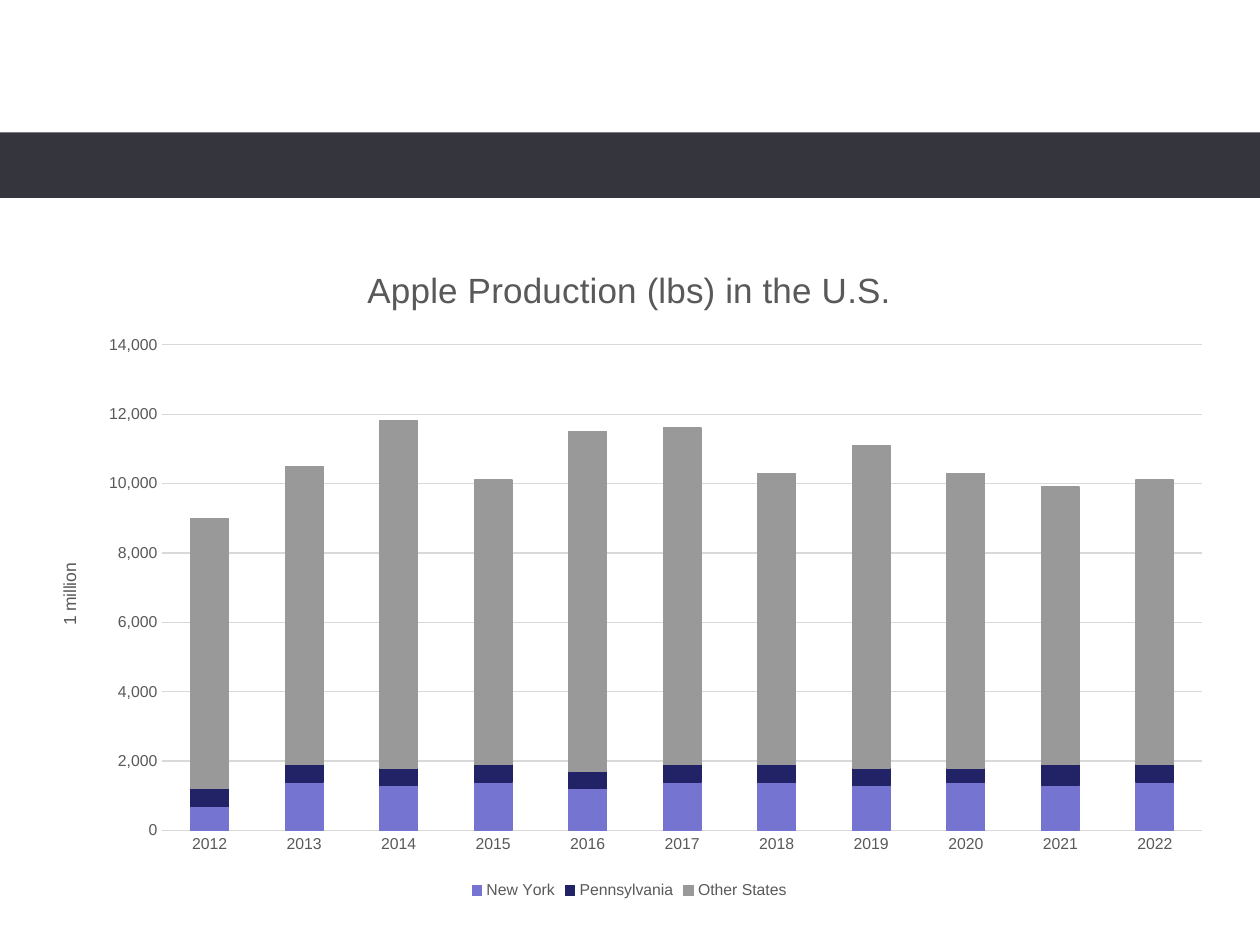
from pptx import Presentation
from pptx.chart.data import CategoryChartData as Data
from pptx.dml.color import RGBColor as Rgb
from pptx.enum.chart import XL_CHART_TYPE as Kind, XL_LEGEND_POSITION as Spot, XL_TICK_MARK as Tick
from pptx.enum.shapes import MSO_SHAPE as Shape
from pptx.util import Inches, Pt

HUES = {
    "band": "35353D", "text": "595959", "grid": "D9D9D9",
    "New York": "7575D1", "Pennsylvania": "222267", "Other States": "999999",
}
CROPS = {
    "New York": (700, 1400, 1300, 1400, 1200, 1400, 1400, 1300, 1400, 1300, 1400),
    "Pennsylvania": (500, 500, 500, 500, 500, 500, 500, 500, 400, 600, 500),
    "Other States": (7800, 8600, 10000, 8200, 9800, 9700, 8400, 9300, 8500, 8000, 8200),
}


def hue(key):
    return Rgb.from_string(HUES[key])


def style(font, size):
    font.name = "Arial"
    font.size = Pt(size)
    font.bold = False
    font.color.rgb = hue("text")


def rule(line, key):
    line.color.rgb = hue(key)
    line.width = Pt(0.75)


def label(frame, text, size):
    run = frame.paragraphs[0].add_run()
    run.text = text
    style(run.font, size)


def add_band(slide, box):
    band = slide.shapes.add_shape(Shape.RECTANGLE, *map(Inches, box))
    band.shadow.inherit = False
    band.fill.solid()
    band.fill.fore_color.rgb = hue("band")
    band.line.fill.background()


def add_crops(slide, box):
    data = Data(number_format="#,##0")
    data.categories = [str(year) for year in range(2012, 2023)]
    for name, vals in CROPS.items():
        data.add_series(name, vals)
    chart = slide.shapes.add_chart(Kind.COLUMN_STACKED, *map(Inches, box), data).chart
    style(chart.font, 10)

    chart.has_title = True
    label(chart.chart_title.text_frame, "Apple Production (lbs) in the U.S.", 20)
    chart.chart_title.include_in_layout = False
    chart.has_legend = True
    chart.legend.position = Spot.BOTTOM
    chart.legend.include_in_layout = False
    style(chart.legend.font, 9)

    years, sums = chart.category_axis, chart.value_axis
    for axis in (years, sums):
        axis.major_tick_mark = axis.minor_tick_mark = Tick.NONE
        style(axis.tick_labels.font, 9)
    rule(years.format.line, "grid")
    sums.format.line.fill.background()
    sums.has_major_gridlines = True
    rule(sums.major_gridlines.format.line, "grid")
    sums.minimum_scale, sums.maximum_scale, sums.major_unit = 0, 14000, 2000
    sums.tick_labels.number_format = "#,##0"
    sums.tick_labels.number_format_is_linked = False
    label(sums.axis_title.text_frame, "1 million", 10)

    plot = chart.plots[0]
    plot.gap_width, plot.overlap = 150, 100
    plot.vary_by_categories = False
    for part in plot.series:
        part.format.fill.solid()
        part.format.fill.fore_color.rgb = hue(part.name)
        rule(part.format.line, part.name)


def main():
    deck = Presentation()
    deck.slide_width, deck.slide_height = Inches(10), Inches(7.5)
    slide = deck.slides.add_slide(deck.slide_layouts[6])
    add_band(slide, (0, 1.05, 10.01, 0.52))
    add_crops(slide, (0.26, 1.92, 9.47, 5.26))
    deck.save("out.pptx")


if __name__ == "__main__":
    main()
